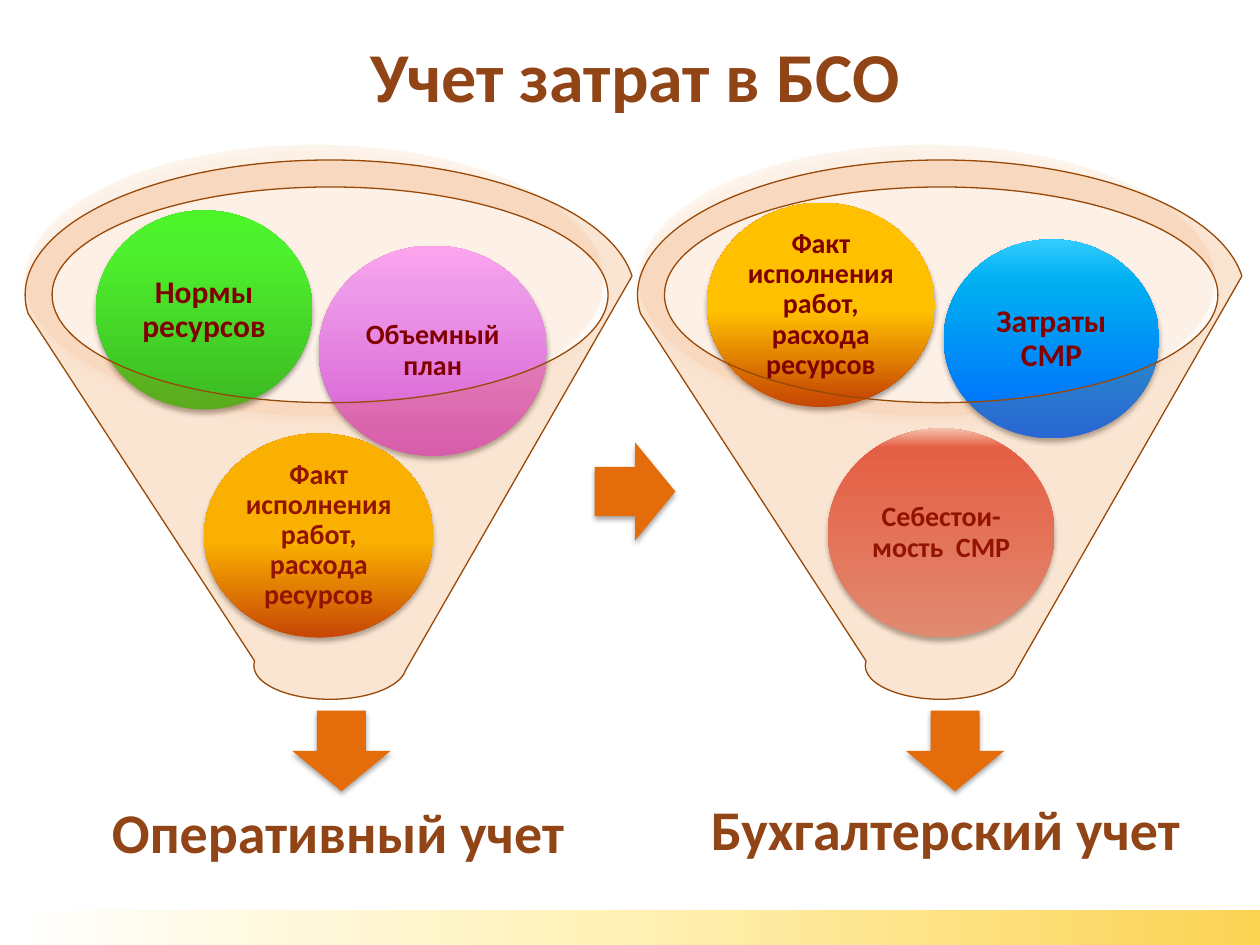
"""Build a slide of two cost-accounting funnels joined by an arrow."""
from dataclasses import dataclass
from typing import Any, Optional

from pptx import Presentation
from pptx.dml.color import RGBColor
from pptx.enum.shapes import MSO_SHAPE
from pptx.enum.text import MSO_ANCHOR, MSO_AUTO_SIZE, PP_ALIGN
from pptx.oxml import parse_xml
from pptx.oxml.ns import nsdecls, qn
from pptx.util import Inches, Pt

COLUMNS, ROWS = 100, 75
SLIDE_WIDTH, SLIDE_HEIGHT = Inches(10), Inches(7.5)


@dataclass(frozen=True)
class Theme:
    font: str = "Calibri"
    heading: str = "914415"
    ball_text: str = "800000"
    arrow: str = "E46C0A"
    outline: str = "984807"
    rim: str = "FCD5B5"
    glow: str = "FDEADA"
    black: str = "000000"
    title_size: int = 40
    caption_size: int = 32
    large_size: int = 18
    small_size: int = 16
    bar: tuple = ((0, "FFFFFF"), (51, "FFF1B3"), (100, "FBD353"))
    pink: tuple = ((0, "D45ACE"), (80, "EE9AEA"), (100, "FEA4ED"))
    orange: tuple = ((0, "C13E03"), (47, "FFC000"), (100, "FFC000"))
    green: tuple = ((0, "3CB923"), (80, "4EF12D"), (100, "4CF52A"))
    red: tuple = ((0, "E19189"), (91, "E55C51"), (100, "F9D6D3"))
    blue: tuple = ((0, "0066FF"), (80, "00B0F0"), (100, "33CCFF"))


THEME = Theme()


@dataclass(frozen=True)
class Box:
    column: float
    row: float
    columns: float
    rows: float

    def place(self) -> tuple:
        """Return left, top, width and height in slide units."""
        across, down = SLIDE_WIDTH / COLUMNS, SLIDE_HEIGHT / ROWS
        return (int(self.column * across), int(self.row * down),
                int(self.columns * across), int(self.rows * down))


@dataclass(frozen=True)
class Shadow:
    color: str
    opacity: int
    blur: float
    distance: float


@dataclass(frozen=True)
class Ball:
    text: str
    box: Box
    gradient: tuple
    size: int


@dataclass(frozen=True)
class Funnel:
    rim: Box
    cone: Box
    arrow: Box
    balls: tuple
    caption: str
    caption_box: Box


SOFT_SHADOW = Shadow(THEME.black, 35, 3.1, 1.8)
GLOW_SHADOW = Shadow(THEME.glow, 92, 4, 4)
FACT = "Факт исполнения работ, расхода ресурсов"
FUNNELS = (
    Funnel(Box(2, 11.5, 45.9, 21.5), Box(2, 12.7, 48.4, 42.8), Box(23.2, 56.4, 7.8, 6.4), (
        Ball("Объемный план", Box(25.3, 19.5, 18.1, 16.7), THEME.pink, THEME.small_size),
        Ball(FACT, Box(16.2, 34.4, 18.2, 16.2), THEME.orange, THEME.small_size),
        Ball("Нормы ресурсов", Box(7.6, 16.7, 17.2, 15.8), THEME.green, THEME.large_size),
    ), "Оперативный учет", Box(0, 62.8, 53.7, 6.4)),
    Funnel(Box(50.7, 11.5, 45.7, 21.5), Box(50.6, 12.7, 48.2, 42.8), Box(71.9, 56.4, 7.8, 6.4), (
        Ball("Себестои-мость  СМР", Box(65.7, 34, 18, 16.6), THEME.red, THEME.small_size),
        Ball(FACT, Box(56.1, 16.1, 18.1, 16.2), THEME.orange, THEME.small_size),
        Ball("Затраты СМР", Box(74.9, 19, 17.1, 15.8), THEME.blue, THEME.large_size),
    ), "Бухгалтерский учет", Box(48.2, 62.6, 53.7, 6.4)),
)


def apply_format(target: Any, values: dict) -> None:
    """Set every named attribute on the target."""
    for name, value in values.items():
        setattr(target, name, value)


def add_shadow(shape: Any, shadow: Shadow) -> None:
    """Give a shape a shadow that falls straight down."""
    shape._element.spPr.find(qn("a:effectLst")).append(parse_xml(
        f'<a:outerShdw {nsdecls("a")} blurRad="{Pt(shadow.blur)}" dist="{Pt(shadow.distance)}" '
        f'dir="5400000" rotWithShape="0"><a:srgbClr val="{shadow.color}">'
        f'<a:alpha val="{shadow.opacity * 1000}"/></a:srgbClr></a:outerShdw>'))


def add_plain(shapes: Any, kind: MSO_SHAPE, box: Box, shadow: Optional[Shadow] = None) -> Any:
    """Add a preset shape with no outline and an optional shadow."""
    shape = shapes.add_shape(kind, *box.place())
    shape.line.fill.background()
    shape.shadow.inherit = False
    if shadow:
        add_shadow(shape, shadow)
    return shape


def fill_solid(shape: Any, color: str, opacity: int = 100) -> None:
    """Fill a shape with one colour at the given opacity."""
    shape.fill.solid()
    shape.fill.fore_color.rgb = RGBColor.from_string(color)
    if opacity < 100:
        shape._element.spPr.find(qn("a:solidFill"))[0].append(
            parse_xml(f'<a:alpha {nsdecls("a")} val="{opacity * 1000}"/>'))


def fill_gradient(shape: Any, stops: tuple, angle: int) -> None:
    """Fill a shape with a linear gradient."""
    shape.fill.background()
    properties = shape._element.spPr
    marks = "".join(f'<a:gs pos="{position * 1000}"><a:srgbClr val="{color}"/></a:gs>'
                    for position, color in stops)
    properties.replace(properties.find(qn("a:noFill")), parse_xml(
        f'<a:gradFill {nsdecls("a")} rotWithShape="1"><a:gsLst>{marks}</a:gsLst>'
        f'<a:lin ang="{angle * 60000}" scaled="0"/></a:gradFill>'))


def write_text(shape: Any, text: str, size: int, color: str, frame: dict, paragraph_format: dict) -> None:
    """Write one centred bold paragraph into a shape."""
    apply_format(shape.text_frame, {"word_wrap": True, **frame})
    paragraph = shape.text_frame.paragraphs[0]
    apply_format(paragraph, {"alignment": PP_ALIGN.CENTER, **paragraph_format})
    run = paragraph.add_run()
    run.text = text
    apply_format(run.font, {"name": THEME.font, "size": Pt(size), "bold": True})
    run.font.color.rgb = RGBColor.from_string(color)


def add_heading(shapes: Any, text: str, box: Box, size: int) -> None:
    """Add a title or caption text box."""
    write_text(shapes.add_textbox(*box.place()), text, size, THEME.heading,
               {"auto_size": MSO_AUTO_SIZE.SHAPE_TO_FIT_TEXT}, {"space_after": Pt(12)})


def add_ball(shapes: Any, ball: Ball) -> None:
    """Add a shaded ball with its label."""
    shape = add_plain(shapes, MSO_SHAPE.OVAL, ball.box, SOFT_SHADOW)
    fill_gradient(shape, ball.gradient, 270)
    margins = {f"margin_{side}": 0 for side in ("left", "top", "right", "bottom")}
    write_text(shape, ball.text, ball.size, THEME.ball_text,
               {"vertical_anchor": MSO_ANCHOR.MIDDLE, **margins},
               {"line_spacing": 0.9, "space_after": Pt(round(ball.size * 0.35))})


def add_arrow(shapes: Any, box: Box, rotation: int = 0) -> None:
    """Add a block arrow that points down before it is turned."""
    arrow = add_plain(shapes, MSO_SHAPE.DOWN_ARROW, box, SOFT_SHADOW)
    fill_solid(arrow, THEME.arrow)
    arrow.rotation = rotation


def add_funnel(slide: Any, funnel: Funnel) -> None:
    """Add a funnel group holding its balls and outlet arrow."""
    shapes = slide.shapes.add_group_shape().shapes
    fill_solid(add_plain(shapes, MSO_SHAPE.OVAL, funnel.rim, GLOW_SHADOW), THEME.rim, 24)
    add_arrow(shapes, funnel.arrow)
    for ball in funnel.balls:
        add_ball(shapes, ball)
    cone = add_plain(shapes, MSO_SHAPE.FUNNEL, funnel.cone)
    fill_solid(cone, THEME.arrow, 18)
    cone.line.color.rgb = RGBColor.from_string(THEME.outline)
    cone.line.width = Pt(0.75)


def main() -> None:
    """Build and save the presentation."""
    presentation = Presentation()
    apply_format(presentation, {"slide_width": SLIDE_WIDTH, "slide_height": SLIDE_HEIGHT})
    slide = presentation.slides.add_slide(presentation.slide_layouts[6])
    fill_gradient(add_plain(slide.shapes, MSO_SHAPE.RECTANGLE, Box(0, 72.2, COLUMNS, 2.8)), THEME.bar, 0)
    add_heading(slide.shapes, "Учет затрат в БСО", Box(7.5, 2.1, 85.8, 7.7), THEME.title_size)
    for funnel in FUNNELS:
        add_funnel(slide, funnel)
    for funnel in FUNNELS:
        add_heading(slide.shapes, funnel.caption, funnel.caption_box, THEME.caption_size)
    add_arrow(slide.shapes, Box(46.5, 35.8, 7.8, 6.4), 270)
    presentation.save("out.pptx")


if __name__ == "__main__":
    main()
